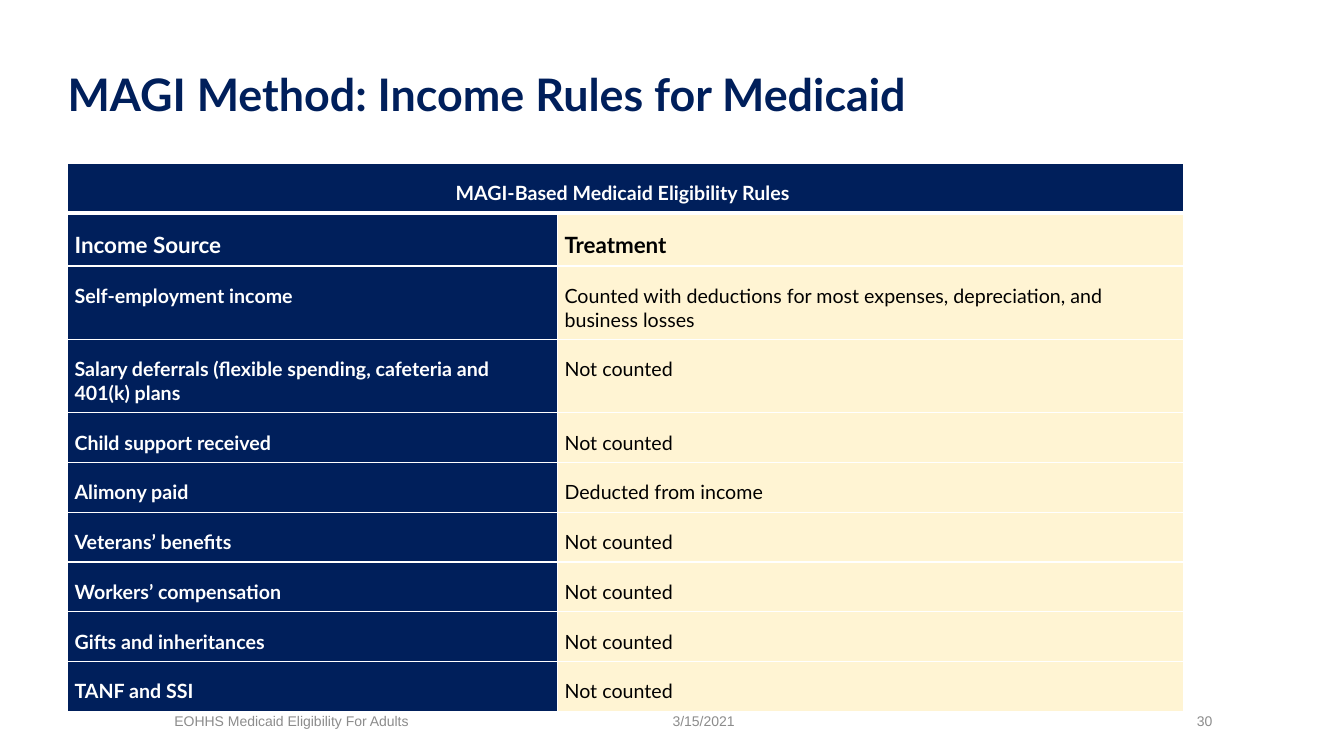
import pptx
import pptx.dml.color
import pptx.enum.text
import pptx.oxml
import pptx.oxml.ns
import pptx.util

PX = 9144  # 100 px to the inch
NAVY = pptx.dml.color.RGBColor(0x00, 0x1F, 0x5B)
CREAM = pptx.dml.color.RGBColor(0xFF, 0xF4, 0xD3)
WHITE = pptx.dml.color.RGBColor(0xFF, 0xFF, 0xFF)
BLACK = pptx.dml.color.RGBColor(0x00, 0x00, 0x00)
GRAY = pptx.dml.color.RGBColor(0x8C, 0x8C, 0x8C)
LEFT = pptx.enum.text.PP_ALIGN.LEFT
CENTER = pptx.enum.text.PP_ALIGN.CENTER
TOP = pptx.enum.text.MSO_ANCHOR.TOP
MIDDLE = pptx.enum.text.MSO_ANCHOR.MIDDLE
BOTTOM = pptx.enum.text.MSO_ANCHOR.BOTTOM

RULES_HEADING = "MAGI-Based Medicaid Eligibility Rules "
RULES = [
    ("Income Source", "Treatment"),
    ("Self-employment income",
     "Counted with deductions for most expenses, depreciation, and business losses"),
    ("Salary deferrals (flexible spending, cafeteria and 401(k) plans", "Not counted"),
    ("Child support received", "Not counted"),
    ("Alimony paid", "Deducted from income"),
    ("Veterans’ benefits", "Not counted"),
    ("Workers’ compensation", "Not counted"),
    ("Gifts and inheritances", "Not counted"),
    ("TANF and SSI", "Not counted"),
]
COLUMN_WIDTHS = (486, 621)
ROW_HEIGHTS = [49, 52, 72, 72] + [49] * 6
TOP_ANCHORED = {(2, 0), (3, 1)}  # the shorter cell of each two-line row


def write(tf, text, size, color, font="Lato", bold=False, align=LEFT):
    tf.text = text
    p = tf.paragraphs[0]
    p.alignment = align
    f = p.runs[0].font
    f.name, f.size, f.bold = font, pptx.util.Pt(size), bold
    f.color.rgb = color


def set_plain_frame(tf):
    """Wrapped, middle-anchored text without insets."""
    tf.word_wrap = True
    tf.auto_size = pptx.enum.text.MSO_AUTO_SIZE.NONE
    tf.vertical_anchor = MIDDLE
    tf.margin_left = tf.margin_right = tf.margin_top = tf.margin_bottom = 0


def set_borders(cell, top=1, bottom=1):
    """White lines on all sides, widths in points."""
    tcPr = cell._tc.get_or_add_tcPr()
    widths = {"lnL": 1, "lnR": 1, "lnT": top, "lnB": bottom}
    for i, (side, width) in enumerate(widths.items()):
        tcPr.insert(i, pptx.oxml.parse_xml(
            f'<a:{side} {pptx.oxml.ns.nsdecls("a")} w="{pptx.util.Pt(width)}">'
            f'<a:solidFill><a:srgbClr val="{WHITE}"/></a:solidFill></a:{side}>'))


def add_title(s, x, y, w, h):
    title = s.shapes.title
    title.left, title.top, title.width, title.height = (v * PX for v in (x, y, w, h))
    set_plain_frame(title.text_frame)
    write(title.text_frame, "MAGI Method: Income Rules for Medicaid", 32, NAVY, bold=True)


def format_cell(cell, fill, anchor):
    """Fill and insets; the insets let one 14 pt line fit a 49 px row."""
    cell.fill.solid()
    cell.fill.fore_color.rgb = fill
    cell.vertical_anchor = anchor
    cell.margin_left, cell.margin_right = 7 * PX, 8 * PX
    cell.margin_top, cell.margin_bottom = 18 * PX, 8 * PX


def add_rules_table(s, x, y):
    table = s.shapes.add_table(
        len(ROW_HEIGHTS), len(COLUMN_WIDTHS), x * PX, y * PX,
        sum(COLUMN_WIDTHS) * PX, sum(ROW_HEIGHTS) * PX).table
    for column, width in zip(table.columns, COLUMN_WIDTHS):
        column.width = width * PX
    for row, height in zip(table.rows, ROW_HEIGHTS):
        row.height = height * PX

    heading = table.cell(0, 0)
    heading.merge(table.cell(0, 1))
    write(heading.text_frame, RULES_HEADING, 14, WHITE, bold=True, align=CENTER)
    for cell in table.rows[0].cells:
        format_cell(cell, NAVY, BOTTOM)
        set_borders(cell, bottom=3)

    for r, texts in enumerate(RULES, start=1):
        is_header = r == 1
        for c, text in enumerate(texts):
            cell = table.cell(r, c)
            is_label = c == 0
            format_cell(cell, NAVY if is_label else CREAM,
                        TOP if (r, c) in TOP_ANCHORED else BOTTOM)
            write(cell.text_frame, text, 16 if is_header else 14,
                  WHITE if is_label else BLACK, bold=is_label or is_header)
            set_borders(cell, top=3 if is_header else 1)


def add_footer(s, y, h):
    for text, x, w in (("3/15/2021", 667, 311),
                       ("EOHHS Medicaid Eligibility For Adults", 173, 422),
                       ("30", 1187, 80)):
        tf = s.shapes.add_textbox(x * PX, y * PX, w * PX, h * PX).text_frame
        set_plain_frame(tf)
        write(tf, text, 10, GRAY, font="Arial")


def main():
    prs = pptx.Presentation()
    prs.slide_width, prs.slide_height = 1333 * PX, 750 * PX
    s = prs.slides.add_slide(prs.slide_layouts[5])
    add_title(s, 67, 30, 1200, 125)
    add_rules_table(s, 67, 162)
    add_footer(s, 695, 40)
    prs.save("out.pptx")


if __name__ == "__main__":
    main()
